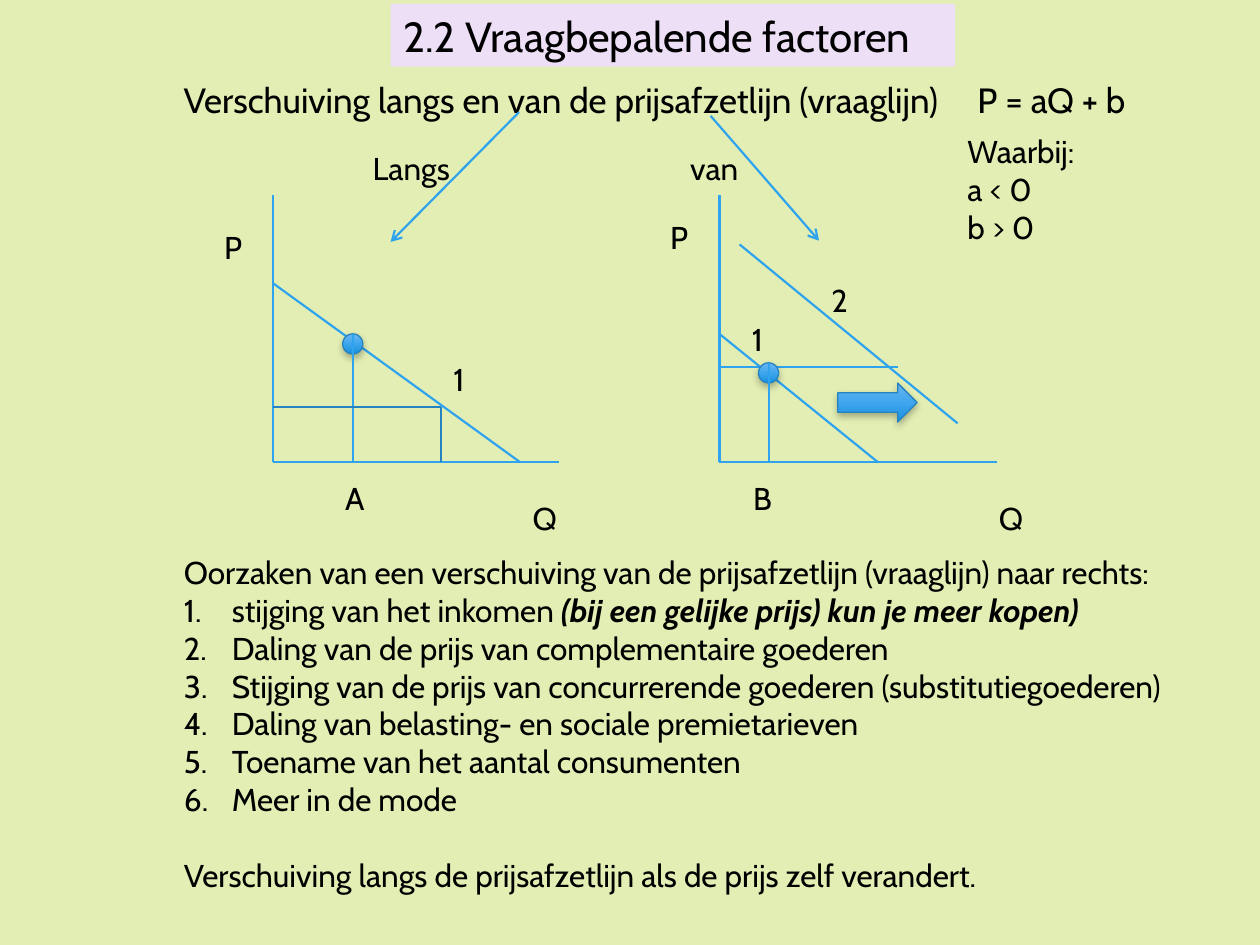
from pptx import Presentation
from pptx.dml.color import RGBColor
from pptx.enum.shapes import MSO_CONNECTOR, MSO_SHAPE
from pptx.enum.text import MSO_ANCHOR, MSO_AUTO_SIZE, PP_ALIGN
from pptx.oxml import parse_xml
from pptx.oxml.ns import nsdecls
from pptx.util import Inches, Pt

BACKGROUND = RGBColor(0xE2, 0xEE, 0xB4)
TITLE_FILL = RGBColor(0xED, 0xDF, 0xF6)
INK = RGBColor(0, 0, 0)
BLUE = RGBColor(0x2F, 0xA3, 0xEE)
DARK_BLUE = RGBColor(0x26, 0x83, 0xBF)
GLOSS = {0: RGBColor(0x6C, 0xB6, 0xF1), 50: RGBColor(0x3F, 0xA6, 0xEE),
         100: RGBColor(0x18, 0x91, 0xDF)}
FONT = "Cabin"
COLUMNS, ROWS = 100, 75
AXIS_TOP, BASE = 15.5, 36.7
ALONG_AXIS, SHIFT_AXIS = 21.7, 57.1
LABEL_HEIGHT, DOT = 4, 1.6

CAUSES = [
    ["stijging van het inkomen ", "(bij een gelijke prijs) kun je meer kopen)"],
    ["Daling van de prijs van complementaire goederen"],
    ["Stijging van de prijs van concurrerende goederen (substitutiegoederen)"],
    ["Daling van belasting- en sociale premietarieven"],
    ["Toename van het aantal consumenten"],
    ["Meer in de mode"],
]


def dml(tag, attributes="", children=""):
    return parse_xml(f'<a:{tag} {nsdecls("a")} {attributes}>{children}</a:{tag}>')


class DemandSlide:
    """Draws on one slide; all lengths are columns and rows of the grid."""

    def __init__(self, deck):
        self.slide = deck.slides.add_slide(deck.slide_layouts[1])
        self.column = deck.slide_width / COLUMNS
        self.row = deck.slide_height / ROWS
        self.slide.background.fill.solid()
        self.slide.background.fill.fore_color.rgb = BACKGROUND

    def x(self, columns):
        return round(columns * self.column)

    def y(self, rows):
        return round(rows * self.row)

    def box(self, left, top, width, height):
        return self.x(left), self.y(top), self.x(width), self.y(height)

    def style_text(self, frame, size):
        frame.word_wrap = True
        frame.auto_size = MSO_AUTO_SIZE.NONE
        frame.vertical_anchor = MSO_ANCHOR.TOP
        for paragraph in frame.paragraphs:
            paragraph.alignment = PP_ALIGN.LEFT
            for run in paragraph.runs:
                run.font.name = FONT
                run.font.size = Pt(size)
                run.font.color.rgb = INK

    def place(self, placeholder, *area):
        (placeholder.left, placeholder.top,
         placeholder.width, placeholder.height) = self.box(*area)

    def title(self, text, *area):
        title = self.slide.shapes.title
        self.place(title, *area)
        title.fill.solid()
        title.fill.fore_color.rgb = TITLE_FILL
        title.text_frame.text = text
        self.style_text(title.text_frame, 24)

    def numbered_list(self, intro, items, closing, *area):
        body = self.slide.placeholders[1]
        self.place(body, *area)
        frame = body.text_frame
        for index, parts in enumerate([[intro], *items, [closing]]):
            paragraph = frame.paragraphs[0] if index == 0 else frame.add_paragraph()
            numbered = 1 <= index <= len(items)
            indent = Inches(0.38) if numbered else 0
            properties = paragraph._p.get_or_add_pPr()
            properties.set("marL", str(indent))
            properties.set("indent", str(-indent))
            if numbered:
                properties.append(dml("buFont", 'typeface="+mj-lt"'))
                properties.append(dml("buAutoNum", 'type="arabicPeriod"'))
            else:
                properties.append(dml("buNone"))
            paragraph.space_before = Pt(0)
            for part_index, part in enumerate(parts):
                run = paragraph.add_run()
                run.text = part
                run.font.bold = run.font.italic = part_index == 1
        frame.paragraphs[-1].space_before = Pt(21.8)
        self.style_text(frame, 18)

    def label(self, text, left, top, width=4, height=LABEL_HEIGHT, size=18):
        frame = self.slide.shapes.add_textbox(
            *self.box(left, top, width, height)).text_frame
        frame.text = text
        self.style_text(frame, size)

    def line(self, start, end, color=BLUE, width=1.25, arrow=False):
        line = self.slide.shapes.add_connector(
            MSO_CONNECTOR.STRAIGHT, self.x(start[0]), self.y(start[1]),
            self.x(end[0]), self.y(end[1]))
        line.line.color.rgb = color
        line.line.width = Pt(width)
        if arrow:
            line.line._get_or_add_ln().append(dml("tailEnd", 'type="arrow"'))
        line._element.spPr.append(dml("effectLst"))

    def glossy(self, preset, *area):
        """Add a shape with a vertical blue gradient and a soft shadow."""
        shape = self.slide.shapes.add_shape(preset, *self.box(*area))
        shape.line.color.rgb = DARK_BLUE
        shape.line.width = Pt(0.75)
        stops = "".join(f'<a:gs pos="{share * 1000}"><a:srgbClr val="{color}"/></a:gs>'
                        for share, color in GLOSS.items())
        properties = shape._element.spPr
        properties.insert(2, dml("gradFill", 'rotWithShape="1"',
                                 f'<a:gsLst>{stops}</a:gsLst><a:lin ang="5400000"/>'))
        properties.append(dml(
            "effectLst", "",
            f'<a:outerShdw blurRad="{Pt(4)}" dist="{Pt(2)}" dir="5400000" '
            f'rotWithShape="0"><a:srgbClr val="{INK}"><a:alpha val="28000"/>'
            '</a:srgbClr></a:outerShdw>'))

    def axes(self, axis, q_end, p_top, q_left):
        self.line((axis, AXIS_TOP), (axis, BASE))
        self.line((axis, BASE), (q_end, BASE))
        self.label("P", axis - 4.9, p_top)
        self.label("Q", q_left, 39.1)

    def point(self, x, top):
        """Add a dot on the demand line with a drop line to the Q axis."""
        self.glossy(MSO_SHAPE.OVAL, x - DOT / 2, top, DOT, DOT)
        self.line((x, top), (x, BASE))


def main():
    deck = Presentation()
    deck.slide_width, deck.slide_height = Inches(10), Inches(7.5)
    page = DemandSlide(deck)

    page.title("2.2 Vraagbepalende factoren", 31, 0.3, 44.8, 5)
    page.label("Verschuiving langs en van de prijsafzetlijn (vraaglijn)",
               13.6, 5.7, 63, 4.4, 20)
    page.label("P = aQ + b", 76.6, 5.7, 15.7, 4.4, 20)
    page.label("Waarbij:\na < 0\nb > 0", 75.8, 10, 14.2, 10.1)

    page.label("Langs", 28.6, 11.3, 8.7)
    page.line((41.2, 8.9), (31, 19.2), arrow=True)
    page.axes(ALONG_AXIS, 44.4, 17.6, 41.3)
    page.line((ALONG_AXIS, 22.5), (41.3, BASE))
    page.point(28, 26.5)
    for end in ((ALONG_AXIS, 32.3), (35, BASE)):
        page.line((35, 32.3), end, DARK_BLUE, 0.75)
    page.label("1", 35, 28.1)
    page.label("A", 26.4, 37.5)

    page.label("van", 53.8, 11.3, 12.6)
    page.line((56.4, 9.2), (65, 19.1), arrow=True)
    page.axes(SHIFT_AXIS, 79.1, 16.8, 78.3)
    page.line((SHIFT_AXIS, 26.5), (69.7, BASE))
    page.line((58.7, 19.4), (76, 33.6))
    page.line((SHIFT_AXIS, 29.1), (71.3, 29.1))
    page.point(61, 28.8)
    page.glossy(MSO_SHAPE.RIGHT_ARROW, 66.5, 30.4, 6.3, 3.1)
    page.label("1", 58.7, 24.9)
    page.label("2", 65, 21.8)
    page.label("B", 58.8, 37.5)

    page.numbered_list(
        "Oorzaken van een verschuiving van de prijsafzetlijn (vraaglijn) naar rechts:",
        CAUSES,
        "Verschuiving langs de prijsafzetlijn als de prijs zelf verandert.",
        13.6, 43.4, 82.7, 28.3)
    deck.save("out.pptx")


if __name__ == "__main__":
    main()
